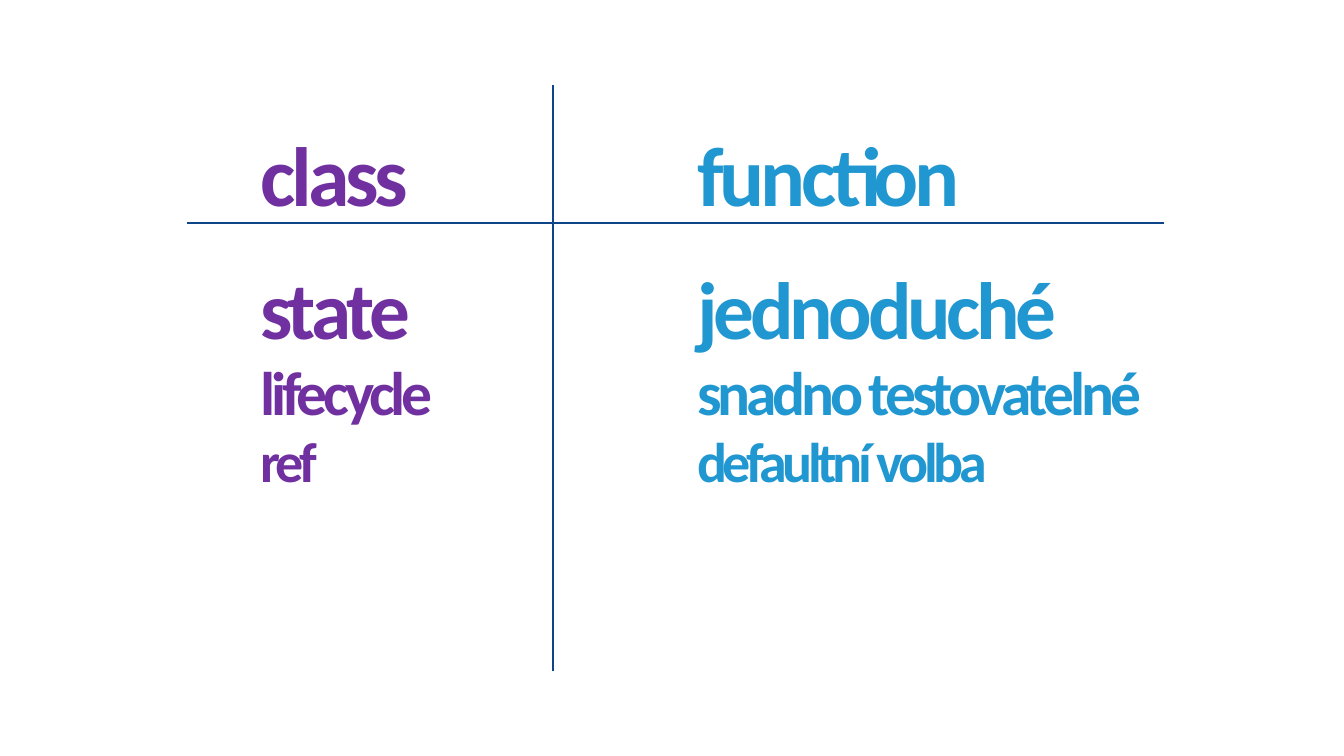
from lxml.etree import SubElement
from pptx import Presentation
from pptx.dml.color import RGBColor
from pptx.enum.shapes import MSO_CONNECTOR
from pptx.enum.text import MSO_ANCHOR
from pptx.oxml.ns import qn
from pptx.util import Cm, Pt

COLORS = {"class": "7030A0", "function": "2097D0", "divider": "0E4588"}
FONT = "Calibri"
HEADING_SIZE = 60
TRAIT_SIZES = (58, 44, 40)
COMPARISON = [
    {"heading": "class", "traits": ("state", "lifecycle", "ref"),
     "left": 6.32, "heading_width": 5.99, "traits_width": 5.99},
    {"heading": "function", "traits": ("jednoduché", "snadno testovatelné", "defaultní volba"),
     "left": 17.32, "heading_width": 7.59, "traits_width": 11.99},
]
HEADING_TOP, HEADING_HEIGHT, HEADING_INSET = 2.72, 3.0, 0.38
TRAITS_TOP, TRAITS_HEIGHT, TRAITS_INSET = 6.32, 7.39, 0.47
DIVIDERS = [(13.94, 16.92, 13.94, 2.13), (4.72, 5.61, 29.34, 5.61)]

deck = Presentation()
deck.slide_width, deck.slide_height = Cm(33.87), Cm(19.05)
slide = deck.slides.add_slide(deck.slide_layouts[6])


def add_words(bounds, inset, anchor, words, sizes, color, spacing):
    frame = slide.shapes.add_textbox(*map(Cm, bounds)).text_frame
    frame.word_wrap = True
    frame.vertical_anchor = anchor
    frame.margin_top = Cm(inset)
    for index, (word, size) in enumerate(zip(words, sizes)):
        paragraph = frame.add_paragraph() if index else frame.paragraphs[0]
        paragraph.line_spacing = spacing
        if index:
            paragraph.space_before = Pt(3.6)
        run = paragraph.add_run()
        run.text = word
        run.font.name = FONT
        run.font.size = Pt(size)
        run.font.bold = True
        run.font.color.rgb = RGBColor.from_string(color)
        run.font._element.set("spc", "-300")


for column in COMPARISON:
    color = COLORS[column["heading"]]
    add_words((column["left"], HEADING_TOP, column["heading_width"], HEADING_HEIGHT),
              HEADING_INSET, MSO_ANCHOR.MIDDLE, [column["heading"]], [HEADING_SIZE], color, 1.0)
    add_words((column["left"], TRAITS_TOP, column["traits_width"], TRAITS_HEIGHT),
              TRAITS_INSET, MSO_ANCHOR.TOP, column["traits"], TRAIT_SIZES, color, 0.9)

for ends in DIVIDERS:
    divider = slide.shapes.add_connector(MSO_CONNECTOR.STRAIGHT, *map(Cm, ends))
    divider.line.color.rgb = RGBColor.from_string(COLORS["divider"])
    divider.line.width = Pt(1.5)
    SubElement(divider._element.spPr, qn("a:effectLst"))

deck.save("out.pptx")
